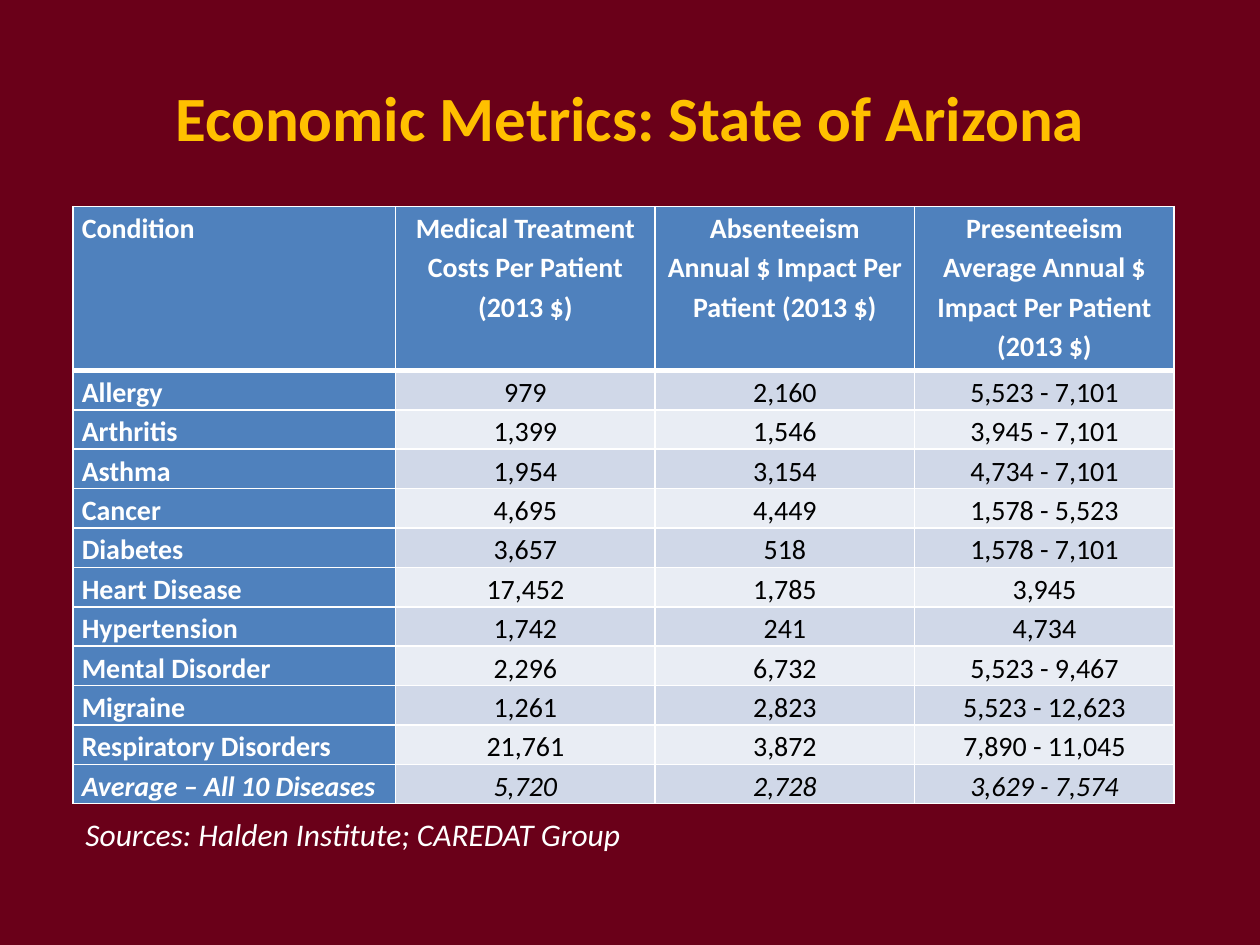
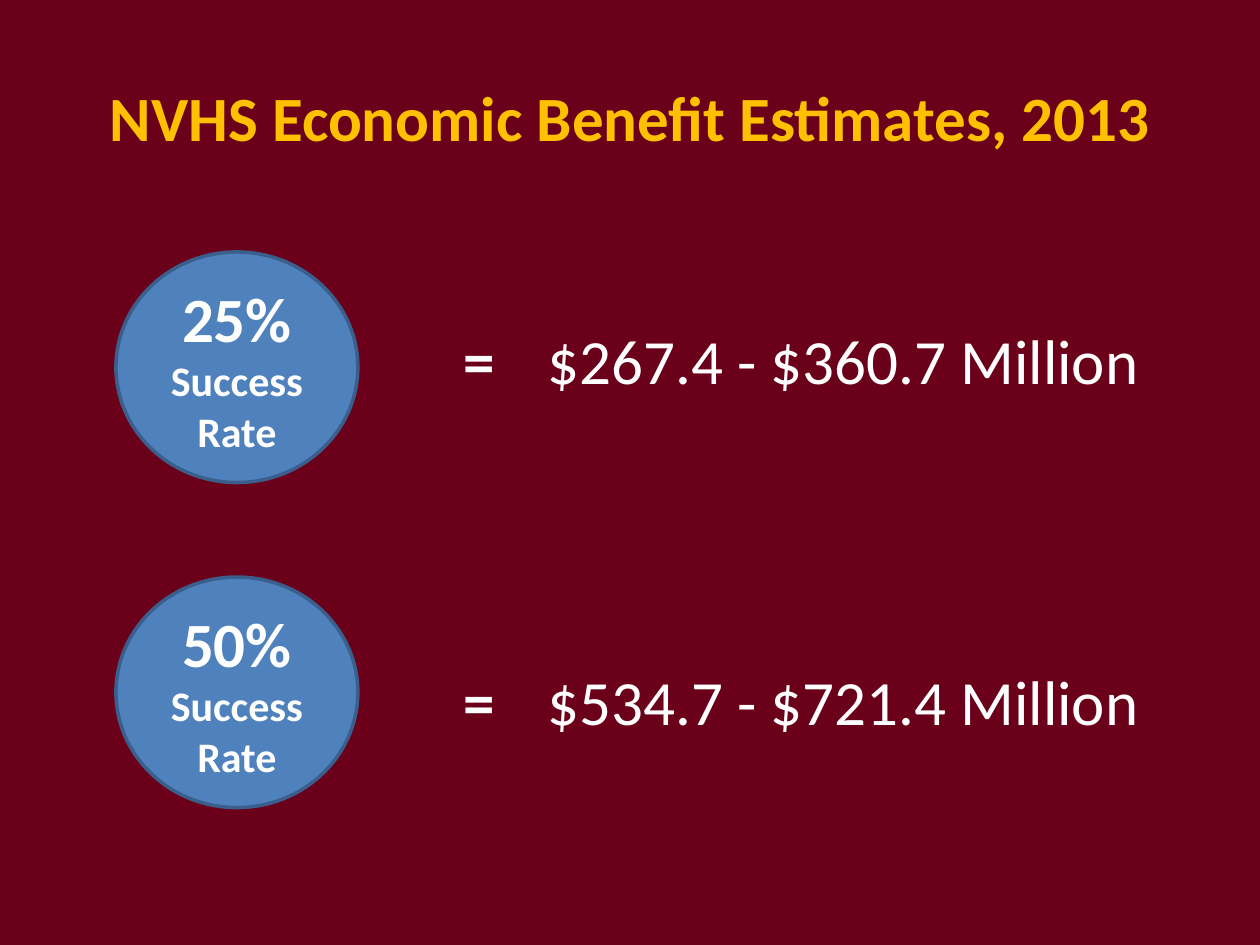
from lxml.etree import SubElement
from pptx import Presentation
from pptx.dml.color import RGBColor
from pptx.enum.shapes import MSO_SHAPE
from pptx.enum.text import MSO_ANCHOR, PP_ALIGN
from pptx.oxml.ns import qn
from pptx.util import Inches, Pt

COLORS = {
    "background": "6A0019",
    "title": "FFC000",
    "blue": "4F81BD",
    "outline": "3A5F8C",
    "band_dark": "D0D8E8",
    "band_light": "E9EDF4",
    "white": "FFFFFF",
    "black": "000000",
}
FONT = "Calibri"

HEADERS = [
    "Condition",
    "Medical Treatment\nCosts Per Patient\n(2013 $)",
    "Absenteeism\nAnnual $ Impact Per Patient (2013 $)",
    "Presenteeism\nAverage Annual $ Impact Per Patient\n(2013 $)",
]
CONDITIONS = [
    ("Allergy", "979", "2,160", "5,523 - 7,101"),
    ("Arthritis", "1,399", "1,546", "3,945 - 7,101"),
    ("Asthma", "1,954", "3,154", "4,734 - 7,101"),
    ("Cancer", "4,695", "4,449", "1,578 - 5,523"),
    ("Diabetes", "3,657", "518", "1,578 - 7,101"),
    ("Heart Disease", "17,452", "1,785", "3,945"),
    ("Hypertension", "1,742", "241", "4,734"),
    ("Mental Disorder", "2,296", "6,732", "5,523 - 9,467"),
    ("Migraine", "1,261", "2,823", "5,523 - 12,623"),
    ("Respiratory Disorders", "21,761", "3,872", "7,890 - 11,045"),
    ("Average – All 10 Diseases", "5,720", "2,728", "3,629 - 7,574"),
]
# rate, circle top, label top, estimate
ESTIMATES = [
    ("25%", 2, 2.5, "$267.4 - $360.7 Million"),
    ("50%", 4.58, 5.21, "$534.7 - $721.4 Million"),
]


def rgb(name):
    return RGBColor.from_string(COLORS[name])


class Deck:
    def __init__(self):
        self.prs = Presentation()
        self.prs.slide_width, self.prs.slide_height = Inches(10), Inches(7.5)
        fill = self.prs.slide_master.background.fill
        fill.solid()
        fill.fore_color.rgb = rgb("background")
        self.s = None

    def style(self, r, size, color="white", bold=False, italic=False):
        r.font.name, r.font.size = FONT, Pt(size)
        r.font.bold, r.font.italic = bold, italic
        r.font.color.rgb = rgb(color)

    def slide(self, title):
        self.s = self.prs.slides.add_slide(self.prs.slide_layouts[5])
        sp = self.s.shapes.title
        sp.left, sp.top = Inches(0.5), Inches(0.3)
        sp.width, sp.height = Inches(9), Inches(1.25)
        tf = sp.text_frame
        tf.text = title
        tf.vertical_anchor = MSO_ANCHOR.MIDDLE
        p = tf.paragraphs[0]
        p.alignment = PP_ALIGN.CENTER
        self.style(p.runs[0], 36, "title", bold=True)

    def text(self, text, left, top, width, height, size,
             align=PP_ALIGN.LEFT, **font):
        sp = self.s.shapes.add_textbox(
            Inches(left), Inches(top), Inches(width), Inches(height))
        tf = sp.text_frame
        tf.word_wrap = False
        tf.text = text
        p = tf.paragraphs[0]
        p.alignment = align
        self.style(p.runs[0], size, **font)

    def circle(self, rate, caption, left, top, width, height):
        sp = self.s.shapes.add_shape(
            MSO_SHAPE.OVAL, Inches(left), Inches(top), Inches(width), Inches(height))
        sp.shadow.inherit = False
        sp.fill.solid()
        sp.fill.fore_color.rgb = rgb("blue")
        sp.line.color.rgb = rgb("outline")
        sp.line.width = Pt(2)
        tf = sp.text_frame
        tf.word_wrap = True
        tf.vertical_anchor = MSO_ANCHOR.MIDDLE
        p = tf.paragraphs[0]
        p.alignment = PP_ALIGN.CENTER
        for text, size in ((rate + " ", 36), (caption, 24)):
            r = p.add_run()
            r.text = text
            self.style(r, size, bold=True)

    def borders(self, cell, top, bottom):
        """Draw white cell edges; top and bottom are widths in points."""
        tc_pr = cell._tc.get_or_add_tcPr()
        for side, width in (("L", 1), ("R", 1), ("T", top), ("B", bottom)):
            ln = SubElement(tc_pr, qn(f"a:ln{side}"), w=str(Pt(width)))
            fill = SubElement(ln, qn("a:solidFill"))
            SubElement(fill, qn("a:srgbClr"), val=COLORS["white"])

    def cell(self, cell, text, row, col, italic):
        header, label = row == 0, col == 0
        self.borders(cell, 3 if row == 1 else 1, 3 if header else 1)
        band = "band_dark" if row % 2 else "band_light"
        cell.fill.solid()
        cell.fill.fore_color.rgb = rgb("blue" if header or label else band)
        cell.margin_left = cell.margin_right = Inches(0.07)
        cell.margin_top = cell.margin_bottom = 0
        cell.vertical_anchor = MSO_ANCHOR.TOP if header else MSO_ANCHOR.MIDDLE
        cell.text_frame.text = text
        for p in cell.text_frame.paragraphs:
            p.alignment = PP_ALIGN.JUSTIFY if label else PP_ALIGN.CENTER
            p.line_spacing = 1.15
            self.style(p.runs[0], 16, "white" if header or label else "black",
                       bold=header or label, italic=italic)

    def table(self, rows, left, top, col_widths, row_heights):
        table = self.s.shapes.add_table(
            len(rows), len(col_widths), Inches(left), Inches(top),
            Inches(sum(col_widths)), Inches(sum(row_heights))).table
        for column, width in zip(table.columns, col_widths):
            column.width = Inches(width)
        for i, (row, height) in enumerate(zip(rows, row_heights)):
            table.rows[i].height = Inches(height)
            for j, text in enumerate(row):
                self.cell(table.cell(i, j), text, i, j, italic=i == len(rows) - 1)


def main():
    deck = Deck()

    deck.slide("Economic Metrics: State of Arizona")
    deck.table([HEADERS] + CONDITIONS, 0.58, 1.64,
               [2.56] + [2.06] * 3, [1.3] + [0.28] * len(CONDITIONS))
    deck.text("Sources: Halden Institute; CAREDAT Group",
              0.58, 6.42, 4.53, 0.4, 18, italic=True)

    deck.slide("NVHS Economic Benefit Estimates, 2013")
    for rate, circle_top, label_top, estimate in ESTIMATES:
        deck.circle(rate, "Success Rate", 0.92, circle_top, 1.92, 1.83)
        deck.text("=", 3.58, label_top, 0.45, 0.71, 36, PP_ALIGN.CENTER, bold=True)
        deck.text(estimate, 4.25, label_top, 4.94, 0.71, 36)

    deck.prs.save("out.pptx")


if __name__ == "__main__":
    main()
